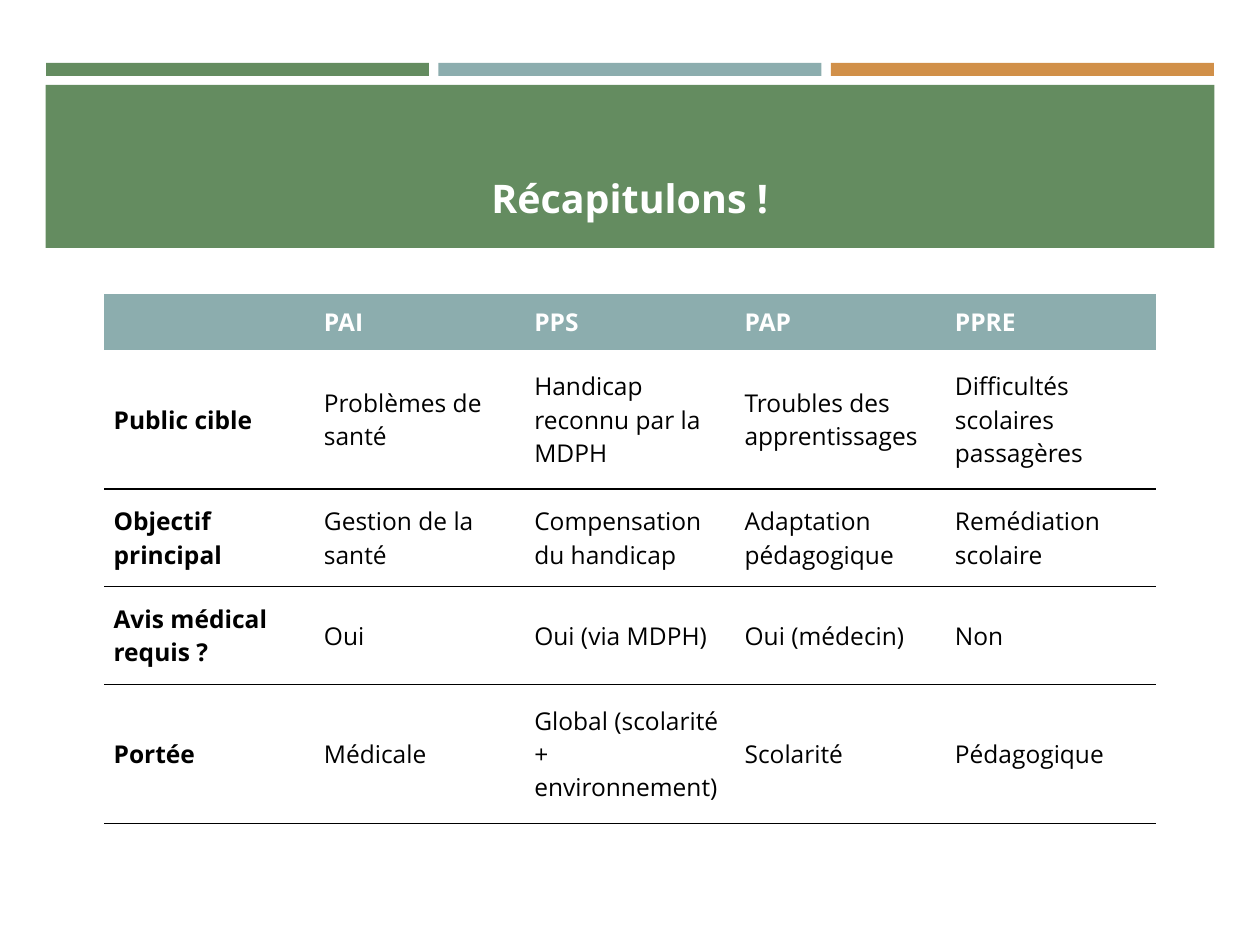
from lxml import etree
from pptx import Presentation
from pptx.dml.color import RGBColor
from pptx.enum.shapes import MSO_SHAPE
from pptx.enum.text import MSO_ANCHOR, PP_ALIGN
from pptx.oxml.ns import qn
from pptx.util import Cm, Pt

RECTANGLE = MSO_SHAPE.RECTANGLE
MIDDLE = MSO_ANCHOR.MIDDLE
CENTER = PP_ALIGN.CENTER

FONT = "Open Sans"
GREEN, TEAL, ORANGE = "648C60", "8CADAE", "D19049"
WHITE, BLACK = "FFFFFF", "000000"
PLAIN_TABLE_STYLE = "{2D5ABB26-0587-4C30-8999-92F81FD0307C}"

TITLE = "Récapitulons !"
ROWS = [
    ("", "PAI", "PPS", "PAP", "PPRE"),
    ("Public cible", "Problèmes de santé", "Handicap reconnu par la MDPH",
     "Troubles des apprentissages", "Difficultés scolaires passagères"),
    ("Objectif principal", "Gestion de la santé", "Compensation du handicap",
     "Adaptation pédagogique", "Remédiation scolaire"),
    ("Avis médical requis ?", "Oui", "Oui (via MDPH)", "Oui (médecin)", "Non"),
    ("Portée", "Médicale", "Global (scolarité + environnement)",
     "Scolarité", "Pédagogique"),
]
ROW_HEIGHTS = [1.13, 2.8, 1.97, 1.97, 2.8]
COLUMN_WIDTH = 4.24

STRIPES = [GREEN, TEAL, ORANGE]
STRIPE_LEFT, STRIPE_WIDTH, STRIPE_STEP = 0.93, 7.72, 7.91


def color(value):
    return RGBColor.from_string(value)


def add_band(page, left, top, width, height, fill):
    band = page.shapes.add_shape(RECTANGLE, Cm(left), Cm(top), Cm(width), Cm(height))
    band.shadow.inherit = False
    band.fill.solid()
    band.fill.fore_color.rgb = color(fill)
    band.line.fill.background()


def format_text(para, size, ink, bold):
    for span in para.runs:
        span.font.name = FONT
        span.font.size = Pt(size)
        span.font.bold = bold
        span.font.color.rgb = color(ink)


def add_title(page):
    box = page.shapes.add_textbox(Cm(1.5), Cm(3.38), Cm(22.4), Cm(1.6))
    box.text_frame.word_wrap = True
    box.text_frame.text = TITLE
    para = box.text_frame.paragraphs[0]
    para.alignment = CENTER
    format_text(para, 22.5, WHITE, True)


def add_bottom_rule(cell):
    line = etree.Element(qn("a:lnB"), w=str(Pt(1)))
    fill = etree.SubElement(line, qn("a:solidFill"))
    etree.SubElement(fill, qn("a:srgbClr"), val=BLACK)
    cell._tc.get_or_add_tcPr().insert(0, line)


def fill_cell(cell, text, is_header, is_label):
    cell.margin_left = cell.margin_right = Cm(0.19)
    cell.margin_top = cell.margin_bottom = Cm(0.1)
    cell.vertical_anchor = MIDDLE
    cell.text_frame.text = text
    para = cell.text_frame.paragraphs[0]
    para.space_after = Pt(12)
    format_text(para, 14, WHITE if is_header else BLACK, is_header or is_label)
    if is_header:
        cell.fill.solid()
        cell.fill.fore_color.rgb = color(TEAL)
    else:
        cell.fill.background()
        add_bottom_rule(cell)


def add_summary_table(page):
    columns = len(ROWS[0])
    frame = page.shapes.add_table(len(ROWS), columns, Cm(2.1), Cm(5.93),
                                  Cm(COLUMN_WIDTH * columns), Cm(sum(ROW_HEIGHTS)))
    next(frame.element.iter(qn("a:tableStyleId"))).text = PLAIN_TABLE_STYLE
    table = frame.table
    table.horz_banding = False
    for column in table.columns:
        column.width = Cm(COLUMN_WIDTH)
    for r, (texts, height) in enumerate(zip(ROWS, ROW_HEIGHTS)):
        table.rows[r].height = Cm(height)
        for c, text in enumerate(texts):
            fill_cell(table.cell(r, c), text, r == 0, c == 0)


def main():
    deck = Presentation()
    deck.slide_width, deck.slide_height = Cm(25.4), Cm(19.05)
    page = deck.slides.add_slide(deck.slide_layouts[6])
    for i, fill in enumerate(STRIPES):
        add_band(page, STRIPE_LEFT + i * STRIPE_STEP, 1.27, STRIPE_WIDTH, 0.26, fill)
    add_band(page, 0.92, 1.71, 23.56, 3.29, GREEN)
    add_title(page)
    add_summary_table(page)
    deck.save("out.pptx")


if __name__ == "__main__":
    main()
